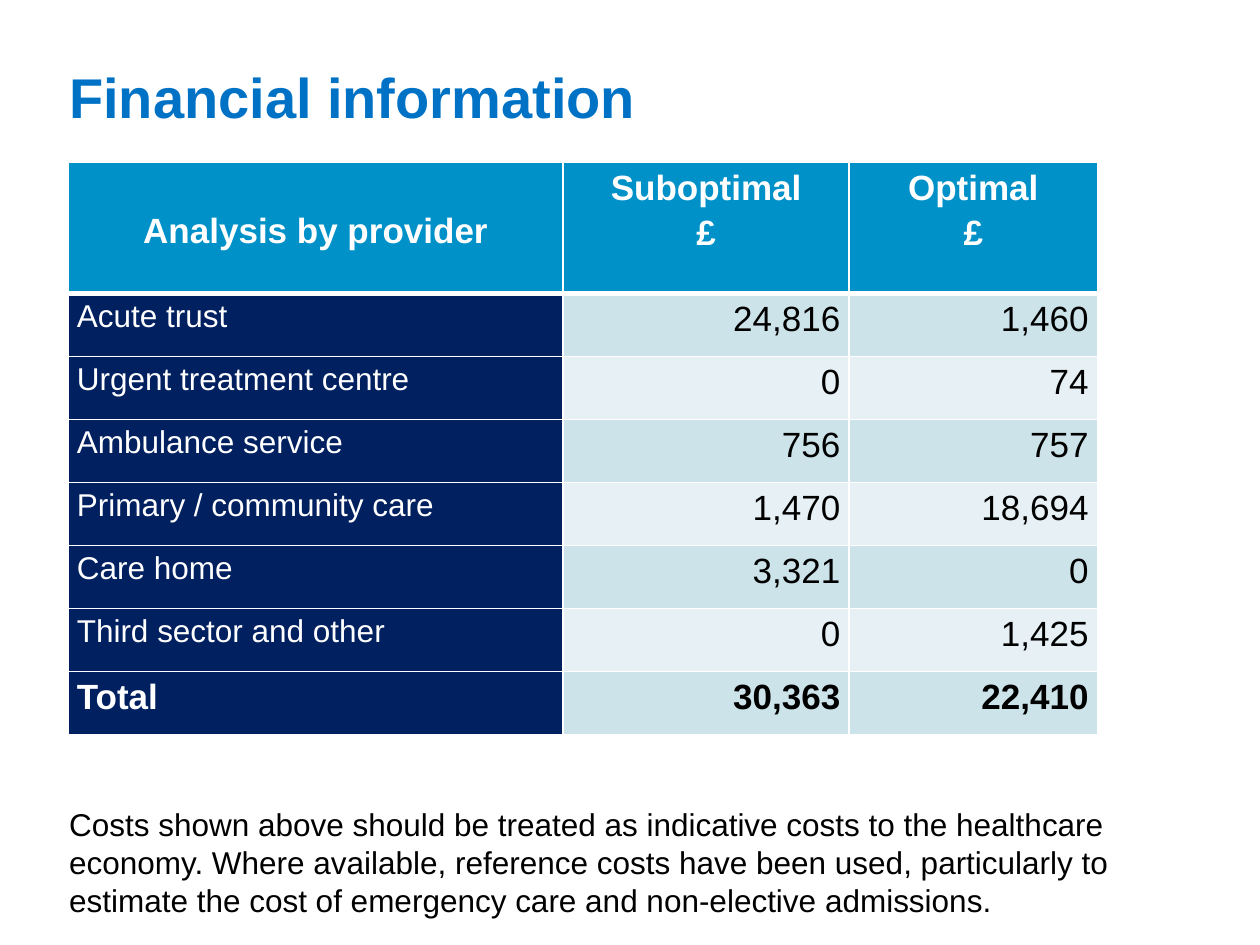
from typing import NamedTuple

from lxml.etree import SubElement
from pptx import Presentation
from pptx.dml.color import RGBColor
from pptx.enum.text import MSO_ANCHOR, PP_ALIGN
from pptx.oxml.ns import qn
from pptx.util import Inches, Pt

FONT = "Arial"
WHITE, BLACK = "FFFFFF", "000000"
TITLE_BLUE, HEADER_BLUE, NAVY = "0072C6", "0091C9", "002060"
BANDS = ("CCE3EA", "E7F1F5")
COLUMN_WIDTHS = (3.93, 2.27, 1.97)
HEADER_HEIGHT, ROW_HEIGHT = 1.04, 0.5


class ProviderCost(NamedTuple):
    provider: str
    suboptimal: str
    optimal: str


HEADERS = ("Analysis by provider", "Suboptimal\n£", "Optimal\n£")
COSTS = (
    ProviderCost("Acute trust", "24,816", "1,460"),
    ProviderCost("Urgent treatment centre", "0", "74"),
    ProviderCost("Ambulance service", "756", "757"),
    ProviderCost("Primary / community care", "1,470", "18,694"),
    ProviderCost("Care home", "3,321", "0"),
    ProviderCost("Third sector and other", "0", "1,425"),
    ProviderCost("Total", "30,363", "22,410"),
)
NOTE = (
    "Costs shown above should be treated as indicative costs to the healthcare "
    "economy. Where available, reference costs have been used, particularly to "
    "estimate the cost of emergency care and non-elective admissions."
)


def rgb(color: str) -> RGBColor:
    return RGBColor.from_string(color)


def write(frame, text: str, *, size: float, color: str = BLACK, bold: bool = False,
          align=PP_ALIGN.LEFT, spacing: float = 1.0) -> None:
    """Fill a text frame, one paragraph for each line of text."""
    frame.word_wrap = True
    for index, line in enumerate(text.split("\n")):
        para = frame.add_paragraph() if index else frame.paragraphs[0]
        para.alignment = align
        para.line_spacing = spacing
        span = para.add_run()
        span.text = line
        span.font.name = FONT
        span.font.size = Pt(size)
        span.font.bold = bold
        span.font.color.rgb = rgb(color)


def set_borders(cell, top: float = 1, bottom: float = 1) -> None:
    """Draw white cell borders; widths are in points."""
    properties = cell._tc.get_or_add_tcPr()
    for side, width in (("L", 1), ("R", 1), ("T", top), ("B", bottom)):
        line = SubElement(properties, qn(f"a:ln{side}"), w=str(Pt(width)))
        fill = SubElement(line, qn("a:solidFill"))
        SubElement(fill, qn("a:srgbClr"), val=WHITE)


def fill_cell(cell, text: str, fill: str, *, top: float = 1, bottom: float = 1,
              anchor=MSO_ANCHOR.TOP, **text_format) -> None:
    set_borders(cell, top, bottom)
    cell.fill.solid()
    cell.fill.fore_color.rgb = rgb(fill)
    cell.margin_left = cell.margin_right = Inches(0.07)
    cell.margin_top = cell.margin_bottom = 0
    cell.vertical_anchor = anchor
    write(cell.text_frame, text, spacing=1.15, **text_format)


def add_cost_table(page) -> None:
    height = HEADER_HEIGHT + ROW_HEIGHT * len(COSTS)
    table = page.shapes.add_table(
        len(COSTS) + 1, len(HEADERS), Inches(0.54), Inches(1.29),
        Inches(sum(COLUMN_WIDTHS)), Inches(height)).table
    for column, width in zip(table.columns, COLUMN_WIDTHS):
        column.width = Inches(width)
    for index, row in enumerate(table.rows):
        row.height = Inches(ROW_HEIGHT if index else HEADER_HEIGHT)

    # Header row
    for column, text in enumerate(HEADERS):
        fill_cell(table.cell(0, column), text, HEADER_BLUE, bottom=3,
                  anchor=MSO_ANCHOR.TOP if column else MSO_ANCHOR.MIDDLE,
                  size=20, color=WHITE, bold=True, align=PP_ALIGN.CENTER)

    # Provider rows, the last one being the total
    for index, cost in enumerate(COSTS):
        row = index + 1
        total = row == len(COSTS)
        top = 1 if index else 3
        fill_cell(table.cell(row, 0), cost.provider, NAVY, top=top,
                  size=20 if total else 18, color=WHITE, bold=total)
        for column, value in enumerate((cost.suboptimal, cost.optimal), start=1):
            fill_cell(table.cell(row, column), value, BANDS[index % 2], top=top,
                      size=20, bold=total, align=PP_ALIGN.RIGHT)


def main() -> None:
    deck = Presentation()
    deck.slide_width, deck.slide_height = Inches(10), Inches(7.5)
    page = deck.slides.add_slide(deck.slide_layouts[5])

    # Title
    title = page.shapes.title
    title.left, title.top = Inches(0.45), Inches(0.4)
    title.width, title.height = Inches(8.05), Inches(0.73)
    title.text_frame.vertical_anchor = MSO_ANCHOR.MIDDLE
    write(title.text_frame, "Financial information", size=32, color=TITLE_BLUE, bold=True)

    add_cost_table(page)

    # Note on costs
    box = page.shapes.add_textbox(Inches(0.45), Inches(6.34), Inches(8.75), Inches(1.01))
    write(box.text_frame, NOTE, size=18)

    deck.save("out.pptx")


if __name__ == "__main__":
    main()
